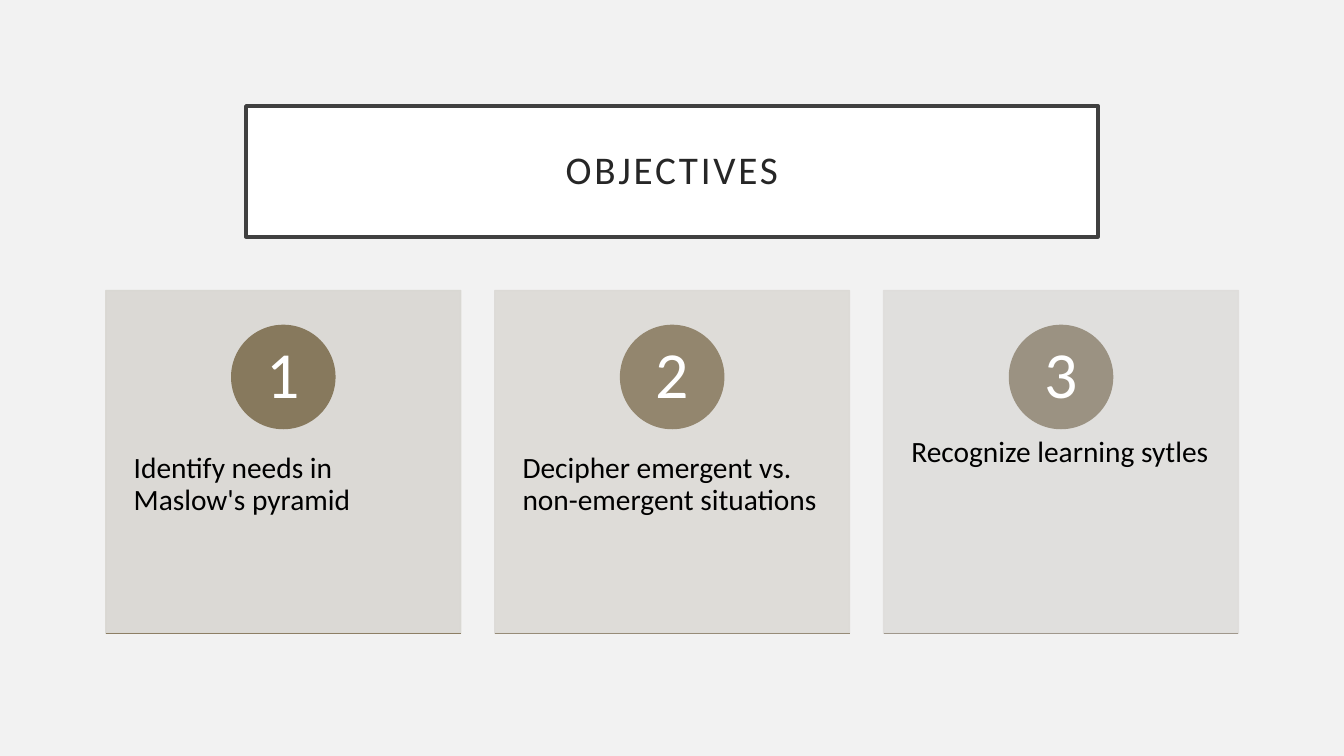
from lxml.etree import SubElement
from pptx import Presentation
from pptx.dml.color import RGBColor
from pptx.enum.shapes import MSO_CONNECTOR, MSO_SHAPE
from pptx.enum.text import MSO_ANCHOR as Anchor, PP_ALIGN as Align
from pptx.oxml.ns import qn
from pptx.util import Cm, Pt

TITLE = "OBJECTIVES"
# text, card colour, badge colour, base line colour
OBJECTIVES = [
    ("Identify needs in Maslow's pyramid",
     RGBColor(0xD9, 0xD7, 0xD2), RGBColor(0x87, 0x79, 0x5D), RGBColor(0x8D, 0x7F, 0x65)),
    ("Decipher emergent vs. non-emergent situations",
     RGBColor(0xDC, 0xDA, 0xD6), RGBColor(0x93, 0x86, 0x6E), RGBColor(0x97, 0x8C, 0x78)),
    ("Recognize learning sytles",
     RGBColor(0xDF, 0xDD, 0xDB), RGBColor(0x9B, 0x92, 0x82), RGBColor(0xA0, 0x98, 0x8C)),
]

FONT = "Calibri"
PAGE_GREY = RGBColor(0xF2, 0xF2, 0xF2)
FRAME_GREY = RGBColor(0x40, 0x40, 0x40)
TITLE_GREY = RGBColor(0x26, 0x26, 0x26)
WHITE = RGBColor(0xFF, 0xFF, 0xFF)
BLACK = RGBColor(0, 0, 0)

CARD_LEFT, CARD_TOP = Cm(2.67), Cm(7.32)
CARD_WIDTH, CARD_HEIGHT = Cm(8.94), Cm(8.64)
CARD_STEP = Cm(9.8)
BADGE_TOP, BADGE_SIZE = Cm(8.2), Cm(2.6)
TEXT_TOP, TEXT_HEIGHT = Cm(10.62), Cm(5.18)
BASE_Y = Cm(15.96)


def set_opacity(color_parent, percent):
    color = color_parent.find(".//" + qn("a:srgbClr"))
    SubElement(color, qn("a:alpha")).set("val", str(percent * 1000))


def add_panel(page, kind, place, fill, line, width=1, opacity=100):
    panel = page.shapes.add_shape(kind, *place)
    panel.shadow.inherit = False
    panel.fill.solid()
    panel.fill.fore_color.rgb = fill
    panel.line.color.rgb = line
    panel.line.width = Pt(width)
    if opacity < 100:
        properties = panel.fill._xPr
        set_opacity(properties.find(qn("a:solidFill")), opacity)
        set_opacity(properties.find(qn("a:ln")), opacity)
    return panel


def write(box, text, size, color, align=Align.LEFT, anchor=Anchor.TOP,
          inset_x=0, inset_y=0, spacing=0):
    frame = box.text_frame
    frame.word_wrap = True
    frame.vertical_anchor = anchor
    frame.margin_left = frame.margin_right = inset_x
    frame.margin_top = frame.margin_bottom = inset_y
    para = frame.paragraphs[0]
    para.alignment = align
    para.line_spacing = 0.9
    span = para.add_run()
    span.text = text
    span.font.name = FONT
    span.font.size = Pt(size)
    span.font.color.rgb = color
    if spacing:
        span.font._element.set("spc", str(spacing * 100))


def add_base_line(page, left, color):
    line = page.shapes.add_connector(
        MSO_CONNECTOR.STRAIGHT, left, BASE_Y, left + CARD_WIDTH, BASE_Y)
    line.line.color.rgb = color
    line.line.width = Pt(1)
    SubElement(line._element.spPr, qn("a:effectLst"))


def add_objective(page, index, text, card_color, badge_color, base_color):
    left = CARD_LEFT + index * CARD_STEP
    add_panel(page, MSO_SHAPE.RECTANGLE, (left, CARD_TOP, CARD_WIDTH, CARD_HEIGHT),
              card_color, card_color, opacity=90)
    box = page.shapes.add_textbox(left, TEXT_TOP, CARD_WIDTH, TEXT_HEIGHT)
    write(box, text, 21, BLACK, inset_x=Cm(0.7), inset_y=Cm(0.91))
    badge_left = left + (CARD_WIDTH - BADGE_SIZE) // 2
    badge = add_panel(page, MSO_SHAPE.OVAL, (badge_left, BADGE_TOP, BADGE_SIZE, BADGE_SIZE),
                      badge_color, badge_color)
    write(badge, str(index + 1), 47, WHITE, Align.CENTER, Anchor.MIDDLE,
          inset_x=Cm(0.2), inset_y=Cm(0.03))
    add_base_line(page, left, base_color)


def main():
    deck = Presentation()
    deck.slide_width, deck.slide_height = Cm(33.87), Cm(19.05)
    page = deck.slides.add_slide(deck.slide_layouts[6])
    page.background.fill.solid()
    page.background.fill.fore_color.rgb = PAGE_GREY

    title = add_panel(page, MSO_SHAPE.RECTANGLE, (Cm(6.2), Cm(2.67), Cm(21.47), Cm(3.3)),
                      WHITE, FRAME_GREY, width=2.5)
    write(title, TITLE, 28, TITLE_GREY, Align.CENTER, Anchor.MIDDLE,
          inset_x=Cm(0.5), inset_y=Cm(0.5), spacing=2)
    for index, objective in enumerate(OBJECTIVES):
        add_objective(page, index, *objective)
    deck.save("out.pptx")


if __name__ == "__main__":
    main()
